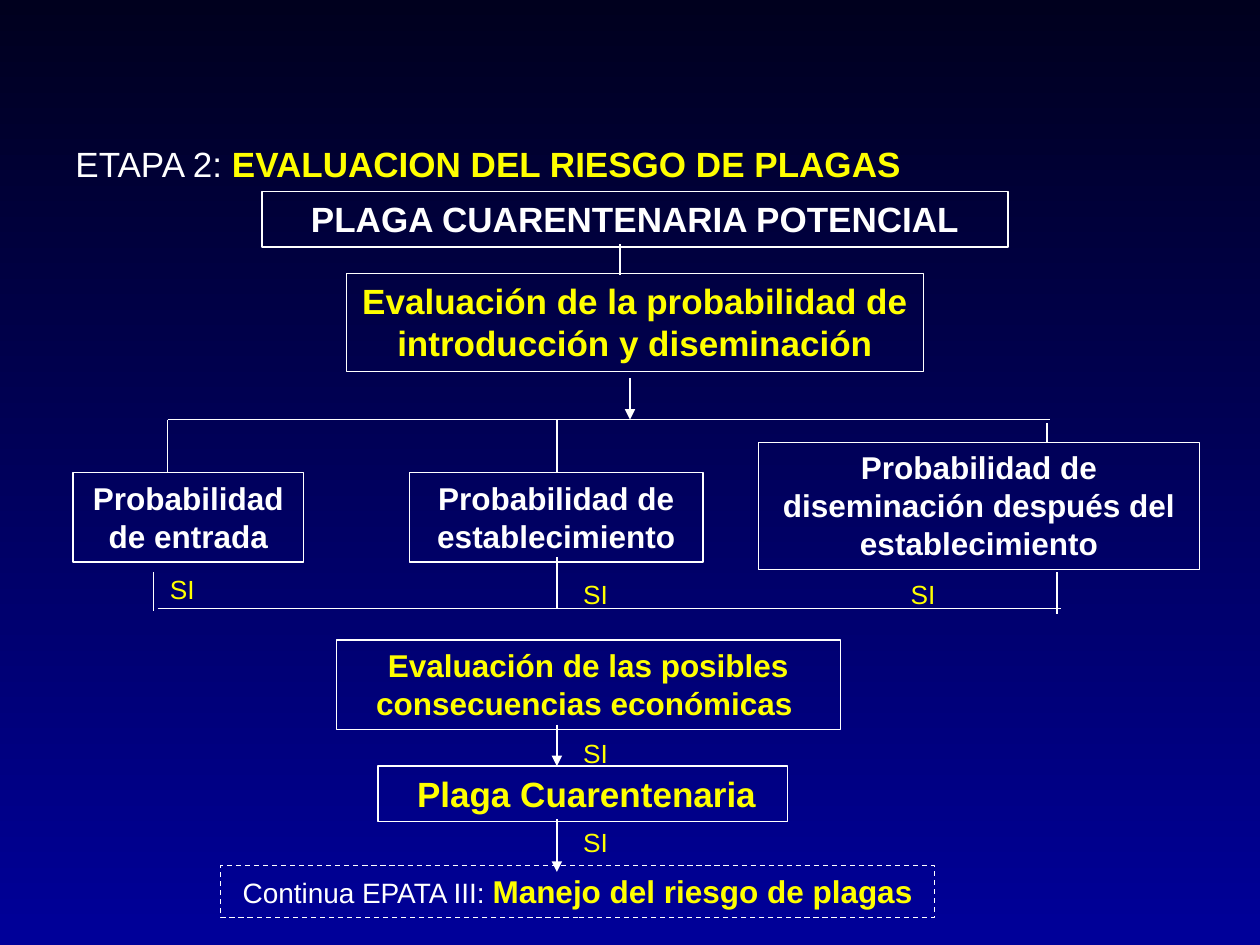
from dataclasses import dataclass

from lxml.etree import SubElement
from pptx import Presentation
from pptx.dml.color import RGBColor
from pptx.enum.dml import MSO_LINE
from pptx.enum.shapes import MSO_CONNECTOR, MSO_SHAPE
from pptx.enum.text import MSO_ANCHOR, MSO_AUTO_SIZE, PP_ALIGN
from pptx.oxml.ns import qn
from pptx.util import Inches, Pt

WHITE = "FFFFFF"
YELLOW = "FFFF00"


@dataclass
class Span:
    text: str
    size: float
    color: str = WHITE
    bold: bool = False


@dataclass
class Box:
    left: float
    top: float
    width: float
    height: float
    spans: list[Span]
    dash: bool = False


@dataclass
class Label:
    left: float
    top: float
    width: float
    height: float
    spans: list[Span]
    wrap: bool = False


@dataclass
class Line:
    x1: float
    y1: float
    x2: float
    y2: float
    width: float = 0.75
    arrow: bool = False


def rgb(code: str) -> RGBColor:
    return RGBColor.from_string(code)


def write(frame, spans: list[Span], align, wrap: bool) -> None:
    frame.word_wrap = wrap
    frame.auto_size = MSO_AUTO_SIZE.SHAPE_TO_FIT_TEXT
    frame.vertical_anchor = MSO_ANCHOR.TOP
    para = frame.paragraphs[0]
    para.alignment = align
    for span in spans:
        run = para.add_run()
        run.text = span.text
        font = run.font
        font.name = "Arial"
        font.size = Pt(span.size)
        font.bold = span.bold
        font.color.rgb = rgb(span.color)


def place(item: Box | Label) -> list[Inches]:
    return [Inches(n) for n in (item.left, item.top, item.width, item.height)]


def draw_box(slide, box: Box) -> None:
    shape = slide.shapes.add_shape(MSO_SHAPE.RECTANGLE, *place(box))
    shape.shadow.inherit = False
    shape.fill.background()
    shape.line.color.rgb = rgb(WHITE)
    shape.line.width = Pt(0.75)
    if box.dash:
        shape.line.dash_style = MSO_LINE.DASH
    write(shape.text_frame, box.spans, PP_ALIGN.CENTER, True)


def draw_label(slide, label: Label) -> None:
    shape = slide.shapes.add_textbox(*place(label))
    write(shape.text_frame, label.spans, PP_ALIGN.LEFT, label.wrap)


def draw_line(slide, line: Line) -> None:
    ends = [Inches(n) for n in (line.x1, line.y1, line.x2, line.y2)]
    link = slide.shapes.add_connector(MSO_CONNECTOR.STRAIGHT, *ends)
    link.line.color.rgb = rgb(WHITE)
    link.line.width = Pt(line.width)
    props = link._element.spPr
    if line.arrow:
        SubElement(props.find(qn("a:ln")), qn("a:tailEnd"), type="triangle")
    SubElement(props, qn("a:effectLst"))


def paint(slide) -> None:
    fill = slide.background.fill
    fill.gradient()
    fill.gradient_angle = 270
    for stop, code in zip(fill.gradient_stops, ("00001E", "000099")):
        stop.color.rgb = rgb(code)


MID = 4.42
FORK = 3.33
JOIN = 4.83
YES = [Span("SI", 15, YELLOW)]

BOXES = [
    Box(2.08, 1.52, 5.92, 0.44,
        [Span("PLAGA CUARENTENARIA POTENCIAL", 20, WHITE, True)]),
    Box(2.75, 2.17, 4.58, 0.78,
        [Span("Evaluación de la probabilidad de introducción y diseminación",
              20, YELLOW, True)]),
    Box(0.58, 3.75, 1.83, 0.71,
        [Span("Probabilidad de entrada", 18, WHITE, True)]),
    Box(3.25, 3.75, 2.33, 0.71,
        [Span("Probabilidad de establecimiento", 18, WHITE, True)]),
    Box(6.02, 3.51, 3.5, 1.01,
        [Span("Probabilidad de diseminación después del establecimiento",
              18, WHITE, True)]),
    Box(2.67, 5.08, 4, 0.71,
        [Span("Evaluación de las posibles consecuencias económicas",
              18, YELLOW, True), Span(" ", 16)]),
    Box(3, 6.08, 3.25, 0.44,
        [Span(" ", 16), Span("Plaga Cuarentenaria", 20, YELLOW, True)]),
    Box(1.75, 6.87, 5.67, 0.41,
        [Span("Continua EPATA III: ", 16),
         Span("Manejo del riesgo de plagas", 18, YELLOW, True)], True),
]

LABELS = [
    Label(0.5, 1.08, 9.08, 0.43,
          [Span("ETAPA 2: ", 20),
           Span("EVALUACION DEL RIESGO DE PLAGAS", 20, YELLOW, True)], True),
    Label(1.25, 4.5, 0.92, 0.35, YES, True),
    *(Label(x, y, 0.4, 0.35, YES)
      for x, y in ((4.53, 4.54), (7.13, 4.54), (4.53, 5.8), (4.53, 6.51))),
]

LINES = [
    Line(4.92, 1.94, 4.92, 2.18),
    Line(5, 3, 5, FORK, 1, True),
    Line(1.33, FORK, 8.33, FORK),
    Line(1.33, FORK, 1.33, 3.75),
    Line(MID, FORK, MID, 3.75),
    Line(8.31, 3.36, 8.31, 3.51),
    Line(1.22, 4.54, 1.22, 4.85),
    Line(MID, JOIN, MID, 4.42),
    Line(8.39, 4.54, 8.39, 4.87, 1),
    Line(1.25, JOIN, 8.42, JOIN),
    Line(MID, 5.75, MID, 6.08, 1, True),
    Line(MID, 6.5, MID, 6.92, 1, True),
]


def main() -> None:
    deck = Presentation()
    deck.slide_width = Inches(10)
    deck.slide_height = Inches(7.5)
    slide = deck.slides.add_slide(deck.slide_layouts[6])
    paint(slide)
    for box in BOXES:
        draw_box(slide, box)
    for label in LABELS:
        draw_label(slide, label)
    for line in LINES:
        draw_line(slide, line)
    deck.save("out.pptx")


if __name__ == "__main__":
    main()
